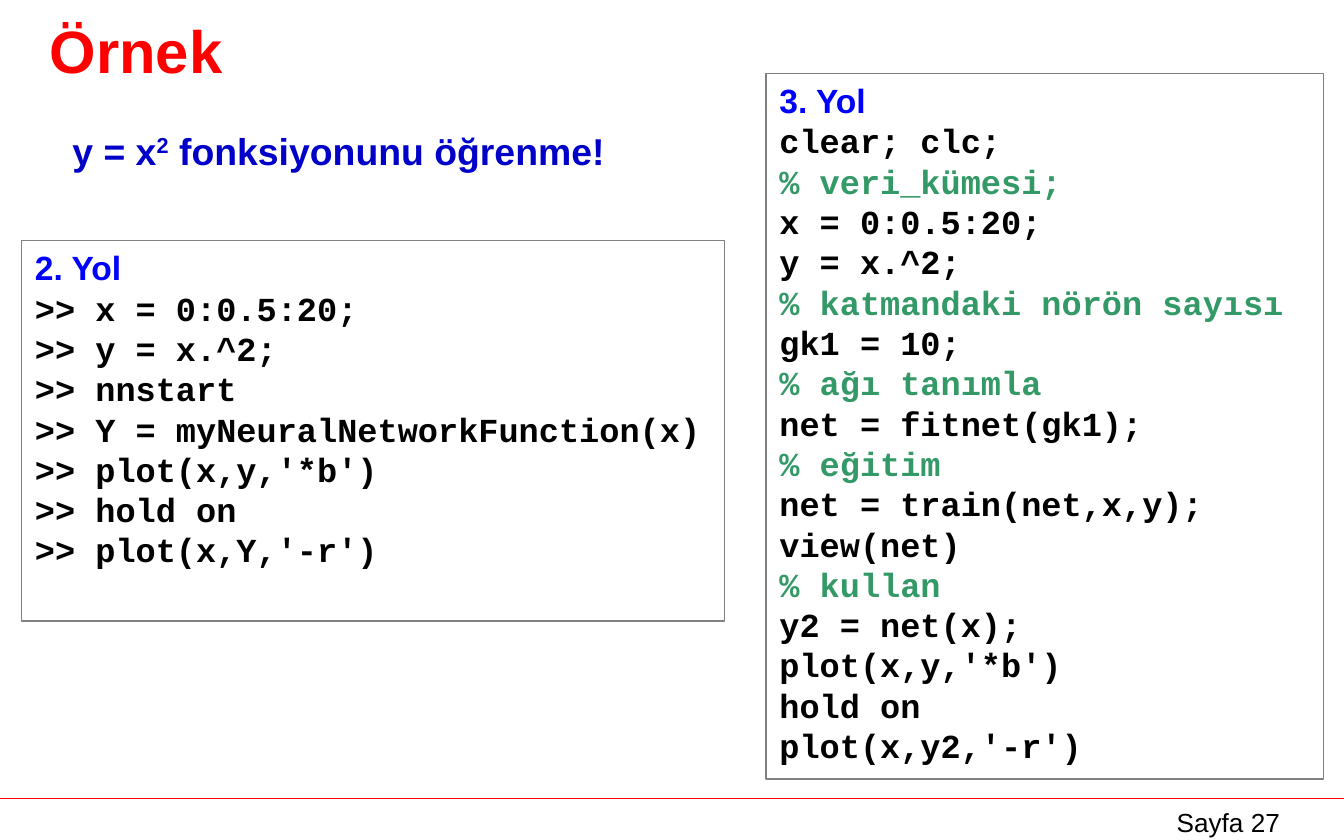
from dataclasses import dataclass

from lxml import etree
from pptx import Presentation
from pptx.dml.color import RGBColor
from pptx.enum import shapes, text
from pptx.oxml import ns
from pptx.util import Cm, Pt


@dataclass(frozen=True)
class Theme:
    sans: str = "Arial"
    mono: str = "Courier New"
    red: str = "FF0000"
    heading: str = "0000FF"
    subtitle: str = "0000C8"
    code: str = "000000"
    comment: str = "339966"
    border: str = "808080"
    title_size: int = 32
    subtitle_size: int = 20
    code_size: int = 18
    footer_size: int = 14
    line_width: float = 0.75


THEME = Theme()

TOOL_STEPS = """>> x = 0:0.5:20;
>> y = x.^2;
>> nnstart
>> Y = myNeuralNetworkFunction(x)
>> plot(x,y,'*b')
>> hold on
>> plot(x,Y,'-r')"""

SCRIPT_STEPS = """clear; clc;
% veri_kümesi;
x = 0:0.5:20;
y = x.^2;
% katmandaki nörön sayısı
gk1 = 10;
% ağı tanımla
net = fitnet(gk1);
% eğitim
net = train(net,x,y);
view(net)
% kullan
y2 = net(x);
plot(x,y,'*b')
hold on
plot(x,y2,'-r')"""


def add_run(p, words, size, color, name=THEME.sans, bold=True):
    r = p.add_run()
    r.text = words
    for key, value in dict(size=Pt(size), name=name, bold=bold).items():
        setattr(r.font, key, value)
    r.font.color.rgb = RGBColor.from_string(color)
    return r


def set_line(line):
    line.width = Pt(THEME.line_width)


def add_text_box(s, box, anchor=text.MSO_ANCHOR.TOP):
    """Add a wrapping text box and return its first paragraph."""
    tf = s.shapes.add_textbox(*map(Cm, box)).text_frame
    tf.word_wrap = True
    tf.vertical_anchor = anchor
    return tf.paragraphs[0]


def add_title(s, box):
    p = add_text_box(s, box, text.MSO_ANCHOR.MIDDLE)
    add_run(p, "Örnek", THEME.title_size, THEME.red)


def add_subtitle(s, box):
    p = add_text_box(s, box)
    for words, baseline in (("y = x", 0), ("2", 30), (" fonksiyonunu öğrenme!", 0)):
        r = add_run(p, words, THEME.subtitle_size, THEME.subtitle)
        if baseline:
            r.font._element.set("baseline", str(baseline * 1000))


def add_code_panel(s, box, heading, code):
    """Add a framed listing whose % lines take the comment colour."""
    sp = s.shapes.add_shape(shapes.MSO_SHAPE.RECTANGLE, *map(Cm, box))
    sp.shadow.inherit = False
    sp.fill.background()
    sp.line.color.rgb = RGBColor.from_string(THEME.border)
    set_line(sp.line)
    tf = sp.text_frame
    tf.word_wrap = True
    tf.vertical_anchor = text.MSO_ANCHOR.TOP
    p = tf.paragraphs[0]
    p.alignment = text.PP_ALIGN.LEFT
    add_run(p, heading, THEME.code_size, THEME.heading)
    for row in code.splitlines():
        p = tf.add_paragraph()
        p.alignment = text.PP_ALIGN.LEFT
        color = THEME.comment if row.startswith("%") else THEME.code
        add_run(p, row, THEME.code_size, color, THEME.mono)


def add_footer(s, box):
    """Rule off the bottom of the slide and set the page number under it."""
    left, top, width, height = box
    rule = s.shapes.add_connector(
        shapes.MSO_CONNECTOR.STRAIGHT, Cm(left), Cm(top), Cm(left + width), Cm(top))
    rule.line.color.rgb = RGBColor.from_string(THEME.red)
    set_line(rule.line)
    etree.SubElement(rule._element.spPr, ns.qn("a:effectLst"))
    number_width, margin = 3.81, 0.28
    p = add_text_box(s, (left + width - margin - number_width, top + 0.03,
                         number_width, height))
    p.alignment = text.PP_ALIGN.CENTER
    add_run(p, "Sayfa 27", THEME.footer_size, THEME.code, bold=False)


def main():
    prs = Presentation()
    prs.slide_width, prs.slide_height = Cm(25.4), Cm(15.88)
    s = prs.slides.add_slide(prs.slide_layouts[6])
    add_footer(s, (0, 15.09, 25.4, 0.66))
    add_title(s, (0.69, 0.1, 23.39, 1.68))
    add_code_panel(s, (0.41, 4.55, 13.28, 7.19), "2. Yol", TOOL_STEPS)
    add_subtitle(s, (1.12, 2.29, 24.21, 12.24))
    add_code_panel(s, (14.48, 1.39, 10.54, 13.34), "3. Yol", SCRIPT_STEPS)
    prs.save("out.pptx")


if __name__ == "__main__":
    main()
